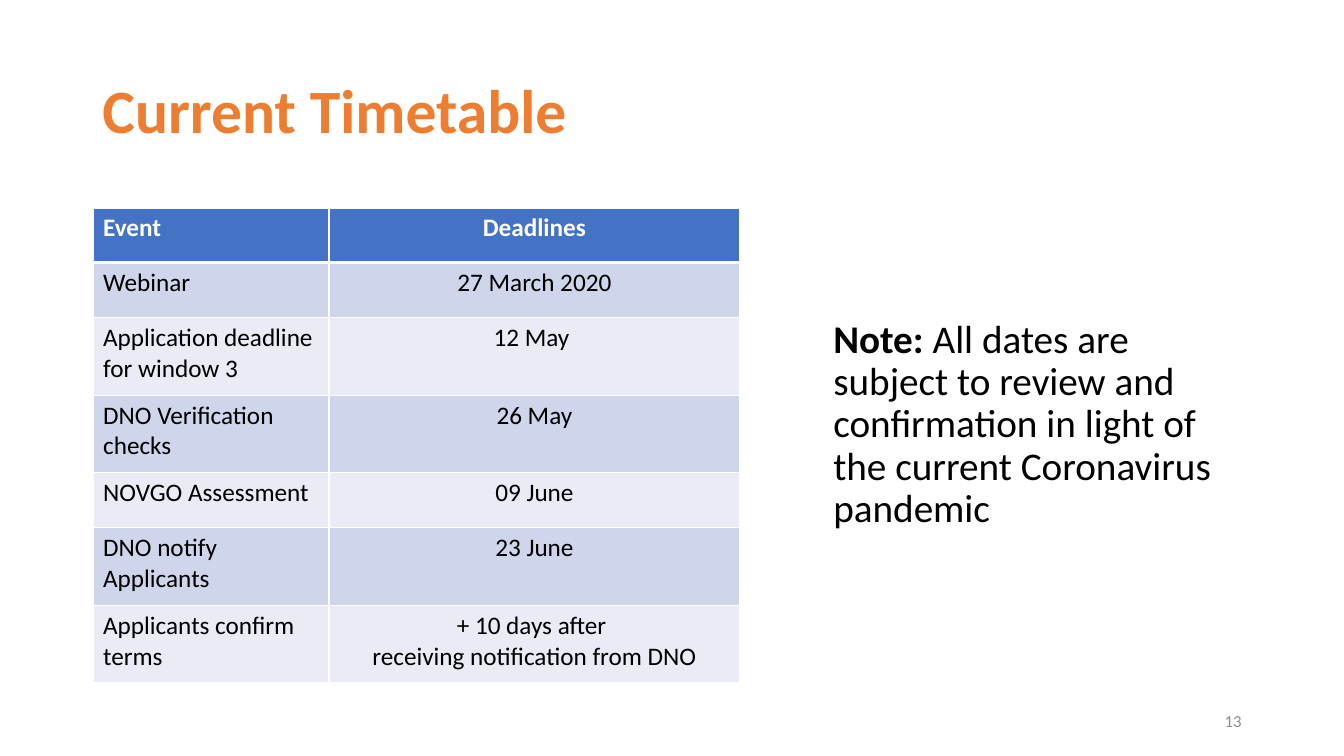
"""Build the timetable slide with its table of deadlines and a note."""
import dataclasses

import lxml.etree
import pptx
import pptx.dml.color
import pptx.enum.text
import pptx.oxml.ns
import pptx.util

Pt = pptx.util.Pt
Align = pptx.enum.text.PP_ALIGN
Anchor = pptx.enum.text.MSO_ANCHOR

FONT = "Calibri"
WHITE, BLACK, ORANGE, GREY = "FFFFFF", "000000", "ED7D31", "8C8C8C"
HEADER_FILL = "4472C4"
BAND_FILLS = ("E9EBF5", "CFD5EA")
COLUMN_WIDTHS = (168.5, 293.5)


@dataclasses.dataclass(frozen=True)
class Frame:
    left: float
    top: float
    width: float
    height: float

    def lengths(self) -> tuple:
        return tuple(Pt(value) for value in dataclasses.astuple(self))


@dataclasses.dataclass(frozen=True)
class Milestone:
    event: str
    deadline: str
    height: float


MILESTONES = (
    Milestone("Event", "Deadlines", 39),
    Milestone("Webinar", "27 March 2020", 39.5),
    Milestone("Application deadline for window 3", "12 May ", 55.3),
    Milestone("DNO Verification checks", "26 May", 55.3),
    Milestone("NOVGO Assessment", "09 June", 39.5),
    Milestone("DNO notify Applicants", "23 June", 55.3),
    Milestone("Applicants confirm terms",
              "+ 10 days after \nreceiving notification from DNO", 55.3),
)


def rgb(value: str) -> pptx.dml.color.RGBColor:
    return pptx.dml.color.RGBColor.from_string(value)


def style(span, size: float, color: str, bold: bool = False) -> None:
    span.font.name = FONT
    span.font.size = Pt(size)
    span.font.bold = bold
    span.font.color.rgb = rgb(color)


def style_frame(text_frame, size: float, color: str, bold: bool, align) -> None:
    for para in text_frame.paragraphs:
        para.alignment = align
        for span in para.runs:
            style(span, size, color, bold)


def place(shape, frame: Frame) -> None:
    shape.left, shape.top, shape.width, shape.height = frame.lengths()


def add_box(page, frame: Frame, anchor):
    text_frame = page.shapes.add_textbox(*frame.lengths()).text_frame
    text_frame.word_wrap = True
    text_frame.vertical_anchor = anchor
    return text_frame


def add_borders(cell, widths: dict) -> None:
    properties = cell._tc.get_or_add_tcPr()
    for side, width in widths.items():
        line = lxml.etree.SubElement(properties, pptx.oxml.ns.qn(f"a:ln{side}"),
                                     w=str(Pt(width)))
        fill = lxml.etree.SubElement(line, pptx.oxml.ns.qn("a:solidFill"))
        lxml.etree.SubElement(fill, pptx.oxml.ns.qn("a:srgbClr"), val=WHITE)


def add_title(page) -> None:
    title = page.shapes.title
    place(title, Frame(66, 29, 828, 104.4))
    title.text_frame.text = "Current Timetable"
    title.text_frame.vertical_anchor = Anchor.MIDDLE
    title.text_frame.paragraphs[0].line_spacing = 0.9
    style_frame(title.text_frame, 44, ORANGE, True, Align.LEFT)


def add_timetable(page) -> None:
    height = sum(milestone.height for milestone in MILESTONES)
    frame = Frame(66.5, 148.5, sum(COLUMN_WIDTHS), height)
    table = page.shapes.add_table(len(MILESTONES), len(COLUMN_WIDTHS),
                                  *frame.lengths()).table
    for column, width in zip(table.columns, COLUMN_WIDTHS):
        column.width = Pt(width)
    for index, milestone in enumerate(MILESTONES):
        header = index == 0
        table.rows[index].height = Pt(milestone.height)
        borders = {"L": 1, "R": 1, "T": 3 if index == 1 else 1, "B": 3 if header else 1}
        entries = ((milestone.event, Align.LEFT), (milestone.deadline, Align.CENTER))
        for cell, (text, align) in zip(table.rows[index].cells, entries):
            add_borders(cell, borders)
            cell.fill.solid()
            cell.fill.fore_color.rgb = rgb(HEADER_FILL if header else BAND_FILLS[index % 2])
            cell.text_frame.text = text
            style_frame(cell.text_frame, 18, WHITE if header else BLACK, header, align)


def add_note(page) -> None:
    para = add_box(page, Frame(588.2, 224.6, 305.3, 290), Anchor.TOP).paragraphs[0]
    para.line_spacing = 0.9
    label, message = para.add_run(), para.add_run()
    label.text = "Note: "
    message.text = ("All dates are subject to review and confirmation "
                    "in light of the current Coronavirus pandemic")
    style(label, 28, BLACK, True)
    style(message, 28, BLACK)


def add_page_number(page) -> None:
    text_frame = add_box(page, Frame(678, 500.5, 216, 28.8), Anchor.MIDDLE)
    text_frame.text = "13"
    style_frame(text_frame, 12, GREY, False, Align.RIGHT)


def main() -> None:
    deck = pptx.Presentation()
    deck.slide_width, deck.slide_height = Pt(960), Pt(540)
    page = deck.slides.add_slide(deck.slide_layouts.get_by_name("Title Only"))
    add_title(page)
    add_page_number(page)
    add_timetable(page)
    add_note(page)
    deck.save("out.pptx")


if __name__ == "__main__":
    main()
